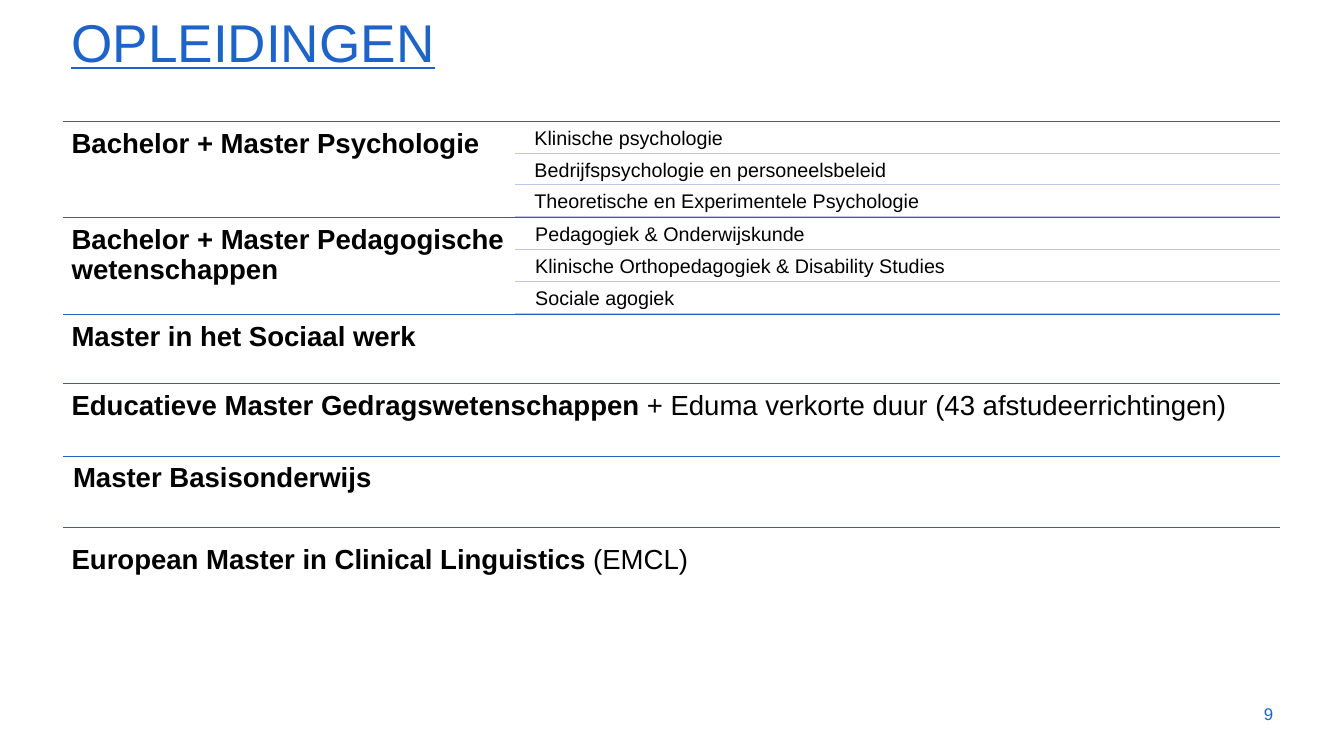
from lxml import etree
from pptx import Presentation
from pptx.dml.color import RGBColor
from pptx.enum.shapes import MSO_CONNECTOR
from pptx.enum.text import MSO_ANCHOR, PP_ALIGN
from pptx.oxml.ns import qn
from pptx.util import Inches, Pt

STRAIGHT = MSO_CONNECTOR.STRAIGHT
TOP, MIDDLE, BOTTOM = MSO_ANCHOR.TOP, MSO_ANCHOR.MIDDLE, MSO_ANCHOR.BOTTOM
LEFT, RIGHT = PP_ALIGN.LEFT, PP_ALIGN.RIGHT
BLUE, PALE_BLUE, BLACK = "1E64C8", "BDC6E6", "000000"

deck = Presentation()
deck.slide_width, deck.slide_height = Inches(18.96), Inches(10.67)
page = deck.slides.add_slide(deck.slide_layouts[6])


def add_text(position, spans, size, color=BLACK, inset=0.1, anchor=TOP,
             align=LEFT, spacing=0.9):
    """Add a one-paragraph box; spans pairs each text with its font settings."""
    box = page.shapes.add_textbox(*(Inches(value) for value in position))
    frame = box.text_frame
    frame_format = {"word_wrap": True, "vertical_anchor": anchor}
    for side in ("left", "top", "right", "bottom"):
        frame_format[f"margin_{side}"] = Inches(inset if inset != 0.1 or side in ("left", "right") else 0.05)
    for name, value in frame_format.items():
        setattr(frame, name, value)
    para = frame.paragraphs[0]
    para.alignment, para.line_spacing = align, spacing
    for text, font_format in spans:
        span = para.add_run()
        span.text = text
        for name, value in {"name": "Arial", "size": Pt(size), **font_format}.items():
            setattr(span.font, name, value)
        span.font.color.rgb = RGBColor.from_string(color)


def add_rule(left, right, y, color):
    rule = page.shapes.add_connector(
        STRAIGHT, Inches(left), Inches(y), Inches(right), Inches(y))
    rule.line.color.rgb = RGBColor.from_string(color)
    rule.line.width = Pt(1)
    etree.SubElement(rule.element.spPr, qn("a:effectLst"))


add_text((0.91, 0.15, 17.18, 0.94), [("OPLEIDINGEN", {"underline": True})], 54,
         BLUE, anchor=BOTTOM)
add_text((17.05, 9.79, 1.01, 0.57), [("9", {})], 17.1, BLUE, anchor=MIDDLE,
         align=RIGHT, spacing=1.0)

# Rule height, text left, text top, text width, bold part, plain part, specialisations
programmes = [
    (1.71, 0.89, 1.71, 6.37, "Bachelor + Master Psychologie", "",
     ["Klinische psychologie", "Bedrijfspsychologie en personeelsbeleid",
      "Theoretische en Experimentele Psychologie"]),
    (3.07, 0.89, 3.07, 6.38, "Bachelor + Master Pedagogische wetenschappen", "",
     ["Pedagogiek & Onderwijskunde",
      "Klinische Orthopedagogiek & Disability Studies", "Sociale agogiek"]),
    (4.44, 0.89, 4.44, 6.2, "Master in het Sociaal werk", "", []),
    (5.41, 0.89, 5.41, 17.17, "Educatieve Master Gedragswetenschappen ",
     "+ Eduma verkorte duur (43 afstudeerrichtingen)", []),
    (6.44, 0.91, 6.43, 7.82, "Master Basisonderwijs", "", []),
    (7.44, 0.89, 7.58, 16.18, "European Master in Clinical Linguistics ", "(EMCL)", []),
]
SPECIALISATION_PITCH = 0.45

for rule_y, left, top, width, bold_text, plain_text, specialisations in programmes:
    spans = [(bold_text, {"bold": True})]
    if plain_text:
        spans.append((plain_text, {"bold": False}))
    add_text((left, top, width, 0.98), spans, 28, inset=0.12)
    column_left = left + width
    for index, specialisation in enumerate(specialisations):
        row_top = rule_y + 0.02 + index * SPECIALISATION_PITCH
        add_text((column_left + 0.2, row_top, 10.58, 0.43), [(specialisation, {})], 20,
                 inset=0.08)
        add_rule(column_left, 18.05, row_top + 0.43, PALE_BLUE)
    add_rule(0.89, 18.06, rule_y, BLUE)

deck.save("out.pptx")
